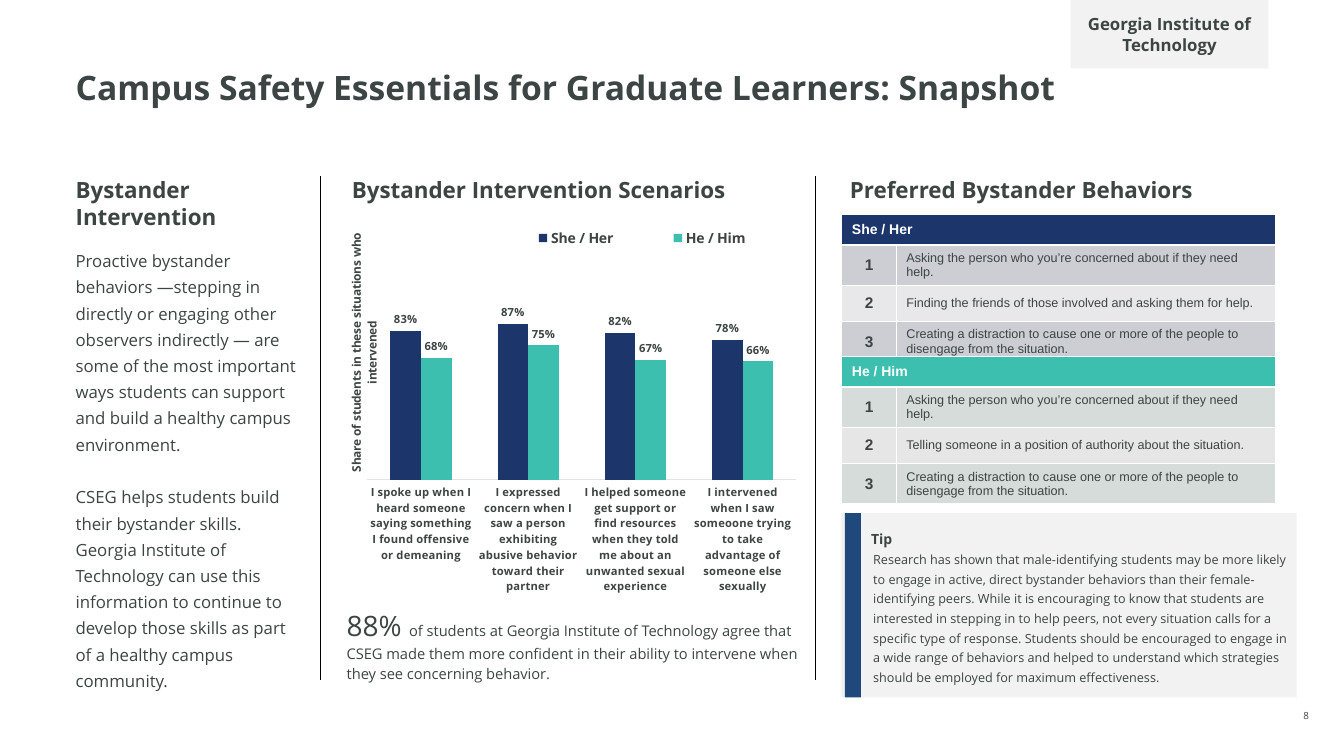
import pptx
import pptx.chart.data
import pptx.dml.color
import pptx.enum.chart
import pptx.enum.shapes
import pptx.enum.text
import pptx.oxml
import pptx.oxml.ns
import pptx.util
from lxml import etree

Inches, Pt = pptx.util.Inches, pptx.util.Pt
RGBColor = pptx.dml.color.RGBColor
ALIGN, ANCHOR = pptx.enum.text.PP_ALIGN, pptx.enum.text.MSO_ANCHOR
qn = pptx.oxml.ns.qn

INK = RGBColor(0x3C, 0x45, 0x43)
HEADING = RGBColor(0x3D, 0x45, 0x43)
NAVY = RGBColor(0x1C, 0x36, 0x6B)
TEAL = RGBColor(0x3C, 0xBF, 0xAE)
BLUE = RGBColor(0x1F, 0x49, 0x7D)
PANEL = RGBColor(0xF2, 0xF2, 0xF2)
WHITE = RGBColor(0xFF, 0xFF, 0xFF)
BLACK = RGBColor(0, 0, 0)
AXIS_GREY = RGBColor(0xE1, 0xE4, 0xE4)
NAVY_BANDS = (RGBColor(0xCD, 0xCE, 0xD4), RGBColor(0xE8, 0xE8, 0xEB))
TEAL_BANDS = (RGBColor(0xD6, 0xDC, 0xDA), RGBColor(0xE6, 0xE6, 0xE6))


def style_font(font, size, color=INK, bold=False, name="Open Sans"):
    font.size, font.bold, font.name = Pt(size), bold, name
    font.color.rgb = color


def fill_frame(shape, texts, size, color=INK, bold=False, margins=(0, 0, 0, 0)):
    """Write one paragraph per text, wrapped, with margins left, top, right, bottom."""
    frame = shape.text_frame
    frame.word_wrap = True
    frame.auto_size = pptx.enum.text.MSO_AUTO_SIZE.NONE
    frame.vertical_anchor = ANCHOR.TOP
    (frame.margin_left, frame.margin_top,
     frame.margin_right, frame.margin_bottom) = map(Inches, margins)
    for index, text in enumerate(texts):
        para = frame.add_paragraph() if index else frame.paragraphs[0]
        para.text = text
        style_font(para.font, size, color, bold)
    return frame


deck = pptx.Presentation()
deck.slide_width, deck.slide_height = Inches(13.33), Inches(7.5)
slide = deck.slides.add_slide(deck.slide_layouts[1])
shapes = slide.shapes

# Title and introduction
title, intro = shapes.title, slide.placeholders[1]
title.left, title.top, title.width, title.height = map(Inches, (0.75, 0.71, 11.83, 0.7))
frame = fill_frame(title, ["Campus Safety Essentials for Graduate Learners: Snapshot"], 24, bold=True)
frame.paragraphs[0].alignment = ALIGN.LEFT
frame.paragraphs[0].line_spacing = 0.9

intro.left, intro.top, intro.width, intro.height = map(Inches, (0.75, 2.43, 2.24, 4.5))
frame = fill_frame(intro, [
    "Proactive bystander behaviors —stepping in directly or engaging other observers "
    "indirectly — are some of the most important ways students can support and build "
    "a healthy campus environment.",
    "CSEG helps students build their bystander skills. Georgia Institute of Technology "
    "can use this information to continue to develop those skills as part of a healthy "
    "campus community."], 12)
for para, gap in zip(frame.paragraphs, (0, 19)):
    properties = para._p.get_or_add_pPr()
    properties.set("marL", "0")
    properties.set("indent", "0")
    etree.SubElement(properties, qn("a:buNone"))
    para.line_spacing = 1.3
    para.space_before = Pt(gap)

# Column headings and dividers
for text, left, width in (("Bystander Intervention", 0.75, 2.49),
                          ("Bystander Intervention Scenarios", 3.49, 3.92),
                          ("Preferred Bystander Behaviors", 8.43, 3.59)):
    box = shapes.add_textbox(Inches(left), Inches(1.75), Inches(width), Inches(0.52))
    fill_frame(box, [text], 16, HEADING, True)

for x in (3.18, 8.09):
    divider = shapes.add_connector(pptx.enum.shapes.MSO_CONNECTOR.STRAIGHT,
                                   Inches(x), Inches(1.75), Inches(x), Inches(6.75))
    divider.line.color.rgb = BLACK
    divider.line.width = Pt(1)
    etree.SubElement(divider._element.spPr, qn("a:effectLst"))

# Scenario chart
data = pptx.chart.data.CategoryChartData(number_format="0%")
data.categories = [
    "I spoke up when I heard someone saying something I found offensive or demeaning",
    "I expressed concern when I saw a person exhibiting abusive behavior toward their partner",
    "I helped someone get support or find resources when they told me about an unwanted sexual experience",
    "I intervened when I saw someoone trying to take advantage of someone else sexually"]
data.add_series("She / Her", (0.83, 0.87, 0.82, 0.78))
data.add_series("He / Him", (0.68, 0.75, 0.67, 0.66))
chart = shapes.add_chart(pptx.enum.chart.XL_CHART_TYPE.COLUMN_CLUSTERED, Inches(3.31),
                         Inches(2.09), Inches(4.78), Inches(3.87), data).chart
style_font(chart.font, 9, name="Lato")
chart.has_title = False
plot = chart.plots[0]
plot.gap_width, plot.overlap, plot.vary_by_categories = 150, 0, False
for series, color in zip(plot.series, (NAVY, TEAL)):
    series.format.fill.solid()
    series.format.fill.fore_color.rgb = color
    labels = series.data_labels
    labels.show_value = True
    labels.number_format, labels.number_format_is_linked = "0%", False
    labels.position = pptx.enum.chart.XL_LABEL_POSITION.OUTSIDE_END
    style_font(labels.font, 8, INK, True)

scenarios, share = chart.category_axis, chart.value_axis
scenarios.major_tick_mark = pptx.enum.chart.XL_TICK_MARK.NONE
scenarios.format.line.color.rgb = AXIS_GREY
scenarios.format.line.width = Pt(0.75)
style_font(scenarios.tick_labels.font, 8, HEADING, True)
share.minimum_scale, share.maximum_scale = 0, 1
share.has_major_gridlines = False
share.visible = False
caption = share.axis_title.text_frame
caption.text = "Share of students in these situations who\vintervened"
style_font(caption.paragraphs[0].font, 8.5, HEADING, True)

chart.has_legend = True
legend = chart.legend
legend.position = pptx.enum.chart.XL_LEGEND_POSITION.BOTTOM
legend.include_in_layout = False
style_font(legend.font, 10, HEADING, True)

plot_area = chart._chartSpace.chart.plotArea
for parent, bounds, target in ((plot_area, (0.075, 0.226, 0.89, 0.463), "inner"),
                               (legend._element, (0.31, 0.03, 0.66, 0.08), None),
                               (share.axis_title._element, (0.02, 0.05), None)):
    for old in parent.findall(qn("c:layout")):
        parent.remove(old)
    layout = pptx.oxml.parse_xml(
        '<c:layout xmlns:c="http://schemas.openxmlformats.org/drawingml/2006/chart"><c:manualLayout/></c:layout>')
    settings = [("layoutTarget", target)] if target else []
    settings += [("xMode", "edge"), ("yMode", "edge"), *zip("xywh", (round(b, 2) for b in bounds))]
    for tag, value in settings:
        etree.SubElement(layout[0], qn("c:" + tag)).set("val", str(value))
    parent.insert(0 if parent is plot_area else 1, layout)

# Confidence statement
box = shapes.add_textbox(Inches(3.34), Inches(5.94), Inches(4.83), Inches(0.88))
frame = fill_frame(box, [""], 10.5, HEADING, margins=(0.1, 0.05, 0.1, 0.05))
para = frame.paragraphs[0]
para.line_spacing = 1.14
for text, size in (("88% ", 20),
                   ("of students at Georgia Institute of Technology agree that CSEG made them more "
                    "confident in their ability to intervene when they see concerning behavior.", 10.5)):
    span = para.add_run()
    span.text = text
    span.font.size = Pt(size)

# Preferred behavior tables
ASKING = "Asking the person who you’re concerned about if they need help."
DISTRACTION = ("Creating a distraction to cause one or more of the people to disengage "
               "from the situation.")
for top, group, color, bands, second in (
        (2.13, "She / Her", NAVY, NAVY_BANDS,
         "Finding the friends of those involved and asking them for help."),
        (3.54, "He / Him", TEAL, TEAL_BANDS,
         "Telling someone in a position of authority about the situation.")):
    table = shapes.add_table(4, 2, Inches(8.35), Inches(top), Inches(4.3), Inches(1.46)).table
    table.first_row = table.horz_banding = False
    table.columns[0].width, table.columns[1].width = Inches(0.54), Inches(3.76)
    rows = [(group, ""), ("1", ASKING), ("2", second), ("3", DISTRACTION)]
    for r, (row, height) in enumerate(zip(rows, (0.3, 0.4, 0.36, 0.4))):
        table.rows[r].height = Inches(height)
        for c, text in enumerate(row):
            cell = table.cell(r, c)
            cell.vertical_anchor = ANCHOR.MIDDLE
            para = cell.text_frame.paragraphs[0]
            para.text = text
            if r == 0:
                cell.margin_top = cell.margin_bottom = 0
                style_font(para.font, 10, WHITE, True, "Arial")
            else:
                para.alignment = ALIGN.LEFT if c else ALIGN.CENTER
                style_font(para.font, 9 if c else 11, INK, c == 0, "Arial")
            for side in ("lnL", "lnR", "lnT", "lnB"):
                border = etree.SubElement(cell._tc.get_or_add_tcPr(), qn("a:" + side))
                border.set("w", str(Pt(1)))
                paint = etree.SubElement(border, qn("a:solidFill"))
                etree.SubElement(paint, qn("a:srgbClr")).set("val", str(WHITE))
            cell.fill.solid()
            cell.fill.fore_color.rgb = bands[(r - 1) % 2] if r else color
    table.cell(0, 0).merge(table.cell(0, 1))

# Tip panel, its accent bar and the institution tag
panels = []
for bounds, color in (((8.34, 5.09, 4.52, 1.83), PANEL), ((8.38, 5.09, 0.16, 1.83), BLUE),
                      ((10.62, 0, 1.96, 0.68), PANEL)):
    panel = shapes.add_shape(pptx.enum.shapes.MSO_SHAPE.RECTANGLE, *map(Inches, bounds))
    panel.shadow.inherit = False
    panel.fill.solid()
    panel.fill.fore_color.rgb = color
    panel.line.fill.background()
    panels.append(panel)
tip, accent, tag = panels

frame = fill_frame(tip, [
    "Tip",
    "Research has shown that male-identifying students may be more likely to engage in active, "
    "direct bystander behaviors than their female-identifying peers. While it is encouraging to "
    "know that students are interested in stepping in to help peers, not every situation calls "
    "for a specific type of response. Students should be encouraged to engage in a wide range of "
    "behaviors and helped to understand which strategies should be employed for maximum "
    "effectiveness."], 9, margins=(0.3, 0, 0.1, 0))
frame.vertical_anchor = ANCHOR.MIDDLE
for para in frame.paragraphs:
    para.alignment, para.line_spacing = ALIGN.LEFT, 1.3
style_font(frame.paragraphs[0].font, 10, HEADING, True)
frame.paragraphs[1]._p.get_or_add_pPr().set("marL", str(Inches(0.02)))

frame = fill_frame(tag, ["Georgia Institute of Technology"], 12, bold=True, margins=(0.1, 0, 0.1, 0))
frame.vertical_anchor = ANCHOR.MIDDLE
frame.paragraphs[0].alignment = ALIGN.CENTER

# Page number
box = shapes.add_textbox(Inches(12.7), Inches(7.01), Inches(0.51), Inches(0.15))
frame = fill_frame(box, ["8"], 7)
frame.vertical_anchor = ANCHOR.BOTTOM
frame.paragraphs[0].alignment = ALIGN.CENTER

deck.save("out.pptx")
